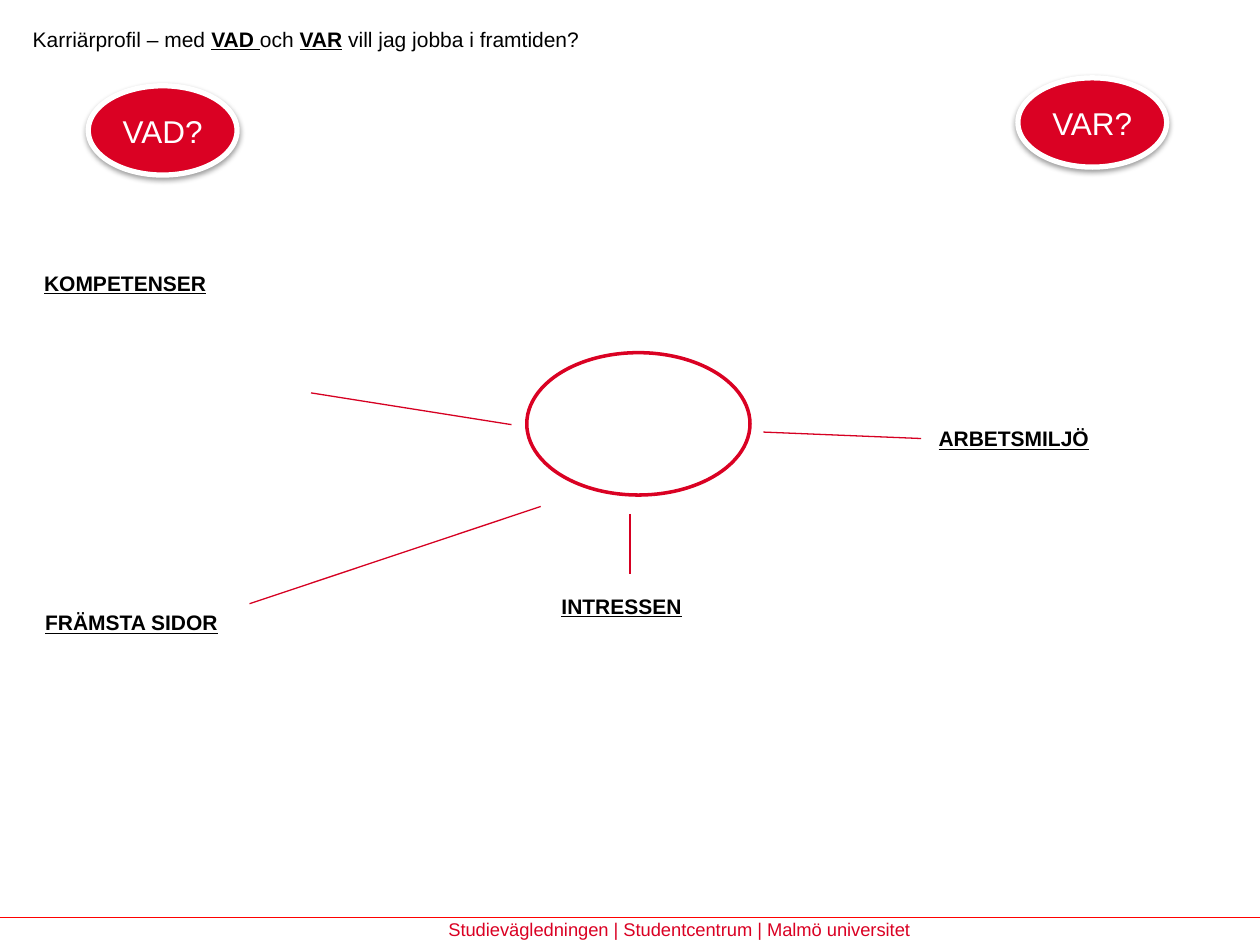
from lxml.etree import SubElement
from pptx import Presentation
from pptx.dml.color import RGBColor
from pptx.enum.shapes import MSO_CONNECTOR, MSO_SHAPE
from pptx.enum.text import MSO_ANCHOR, MSO_AUTO_SIZE as AUTO, PP_ALIGN
from pptx.oxml import parse_xml
from pptx.oxml.ns import nsdecls, qn
from pptx.util import Cm, Pt

rgb = RGBColor.from_string
RED, LINE_RED, WHITE, BLACK = "DA0123", "D60022", "FFFFFF", "000000"
SHADOW = f"""<a:effectLst {nsdecls('a')}>
  <a:outerShdw blurRad="40000" dist="20000" dir="5400000" rotWithShape="0">
    <a:srgbClr val="000000"><a:alpha val="38000"/></a:srgbClr>
  </a:outerShdw>
</a:effectLst>"""


def write(sp, text, size=12, color=BLACK, strong=False, align=PP_ALIGN.LEFT,
          anchor=MSO_ANCHOR.TOP, wrap=True, auto=AUTO.SHAPE_TO_FIT_TEXT):
    """Append one run to the shape; strong means bold and underlined."""
    tf = sp.text_frame
    tf.word_wrap, tf.auto_size, tf.vertical_anchor = wrap, auto, anchor
    p = tf.paragraphs[0]
    p.alignment = align
    r = p.add_run()
    r.text = text
    r.font.name, r.font.size = "Arial", Pt(size)
    r.font.bold = r.font.underline = strong
    r.font.color.rgb = rgb(color)


prs = Presentation()
prs.slide_width, prs.slide_height = Cm(25.4), Cm(19.05)
s = prs.slides.add_slide(prs.slide_layouts[6])

# Title
title = s.shapes.add_shape(MSO_SHAPE.RECTANGLE, Cm(0.41), Cm(0.41), Cm(18.26), Cm(0.76))
title.shadow.inherit = False
title.fill.solid()
title.fill.fore_color.rgb = rgb(WHITE)
title.line.color.rgb = rgb(WHITE)
title.line.width = Pt(2)
for text, strong in [("Karriärprofil – med ", False), ("VAD ", True), ("och ", False),
                     ("VAR", True), (" vill jag jobba i framtiden?", False)]:
    write(title, text, strong=strong)

# Footer rule and spokes from the centre
for x1, y1, x2, y2, color in [
    (25.4, 18.49, 0, 18.49, "FF0000"),
    (15.39, 8.71, 18.57, 8.84, LINE_RED),
    (12.7, 10.36, 12.7, 11.58, LINE_RED),
    (10.9, 10.21, 5.03, 12.17, LINE_RED),
    (10.31, 8.56, 6.27, 7.92, LINE_RED),
]:
    line = s.shapes.add_connector(MSO_CONNECTOR.STRAIGHT, Cm(x1), Cm(y1), Cm(x2), Cm(y2))
    line.line.color.rgb = rgb(color)
    line.line.width = Pt(0.75)
    SubElement(line._element.spPr, qn("a:effectLst"))

# Footer text
footer = s.shapes.add_textbox(Cm(8.79), Cm(18.39), Cm(15.75), Cm(0.74))
write(footer, "Studievägledningen | Studentcentrum | Malmö universitet", size=10.5, color=RED)

# Headings
for text, x, y, w in [
    ("KOMPETENSER", 0.64, 5.33, 6.4),
    ("INTRESSEN", 11.07, 11.84, 4.01),
    ("ARBETSMILJÖ", 18.67, 8.46, 4.6),
    ("FRÄMSTA SIDOR", 0.66, 12.17, 5.59),
]:
    write(s.shapes.add_textbox(Cm(x), Cm(y), Cm(w), Cm(0.76)), text, strong=True)

# Empty centre and the two question ovals
for text, x, y, w, h, fill, outline, width in [
    ("", 10.62, 7.11, 4.5, 2.87, WHITE, RED, 2),
    ("VAD?", 1.78, 1.73, 3, 1.8, RED, WHITE, 3),
    ("VAR?", 20.52, 1.57, 3, 1.8, RED, WHITE, 3),
]:
    oval = s.shapes.add_shape(MSO_SHAPE.OVAL, Cm(x), Cm(y), Cm(w), Cm(h))
    oval.fill.solid()
    oval.fill.fore_color.rgb = rgb(fill)
    oval.line.color.rgb = rgb(outline)
    oval.line.width = Pt(width)
    if text:
        oval._element.spPr.append(parse_xml(SHADOW))
        write(oval, text, size=18, color=WHITE, align=PP_ALIGN.CENTER,
              anchor=MSO_ANCHOR.MIDDLE, wrap=False, auto=AUTO.NONE)
    else:
        oval.shadow.inherit = False

prs.save("out.pptx")
